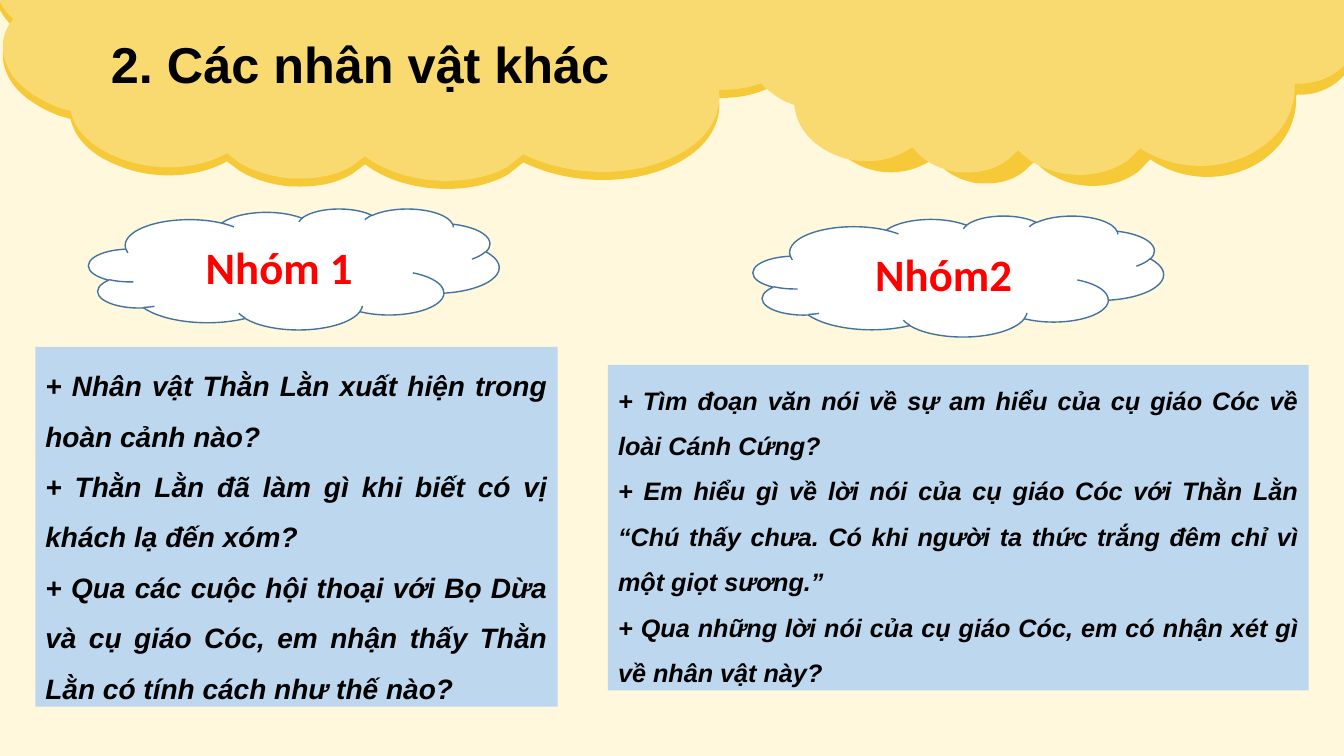
import math

from lxml import etree
from pptx import Presentation
from pptx.dml.color import RGBColor
from pptx.enum import shapes, text
from pptx.oxml.ns import qn
from pptx.util import Inches, Pt

CREAM = RGBColor(0xFF, 0xF8, 0xDC)
GOLD = RGBColor(0xF6, 0xC9, 0x38)
YELLOW = RGBColor(0xF9, 0xDA, 0x70)
PALE_BLUE = RGBColor(0xBD, 0xD7, 0xEE)
OUTLINE_BLUE = RGBColor(0x43, 0x73, 0x9E)
WHITE = RGBColor(0xFF, 0xFF, 0xFF)
BLACK = RGBColor(0, 0, 0)
RED = RGBColor(0xFF, 0, 0)

# Slide inches: the first pair is the start, two numbers are a straight step,
# six are a Bézier curve.
CLOUD_STEPS = [
    (-0.04, 0.01), (7.58, 0.01), (7.55, 0.04),
    (7.81, 0.17, 7.95, 0.38, 7.89, 0.58),
    (7.83, 0.82, 7.51, 0.98, 7.14, 0.97), (7.13, 0.98),
    (7.16, 1.22, 7.02, 1.45, 6.75, 1.6),
    (6.33, 1.84, 5.68, 1.85, 5.19, 1.61), (5.04, 1.73),
    (4.66, 1.95, 4, 1.92, 3.62, 1.63), (3.5, 1.72),
    (3.36, 1.81, 3.18, 1.85, 2.98, 1.85),
    (2.95, 1.85, 2.91, 1.85, 2.87, 1.85),
    (2.69, 1.83, 2.51, 1.78, 2.37, 1.69), (2.25, 1.6),
    (1.97, 1.76, 1.54, 1.79, 1.19, 1.65),
    (0.92, 1.55, 0.74, 1.38, 0.7, 1.18), (0.59, 1.15),
    (0.33, 1.05, 0.13, 0.9, 0.06, 0.71),
    (0, 0.56, 0.02, 0.4, 0.13, 0.27),
    (0.07, 0.21, 0.03, 0.16, 0, 0.1),
]

# Colour, frame, rotation, then how the outline is fitted:
# left, top, horizontal scale, slant of x with y, slope of y with x
SKY = [
    (GOLD, (-0.09, -0.31, 7.96, 2.24), 185, (0, 0, 1, 0, 0)),
    (YELLOW, (-0.09, -0.39, 7.96, 2.24), 185, (0, -0.08, 1, 0, 0)),
    (GOLD, (7.6, -0.33, 5.81, 2.24), 186.9, (7.7, -0.03, 0.73, -0.05, 0)),
    (YELLOW, (7.3, -0.43, 6.11, 2.24), 186.9, (7.41, -0.14, 0.77, -0.06, 0)),
]

GROUPS = [
    ("Nhóm 1", (0.88, 2.07), (0.35, 3.44, 5.18, 3.57), 20, [
        "+ Nhân vật Thằn Lằn xuất hiện trong hoàn cảnh nào?",
        "+ Thằn Lằn đã làm gì khi biết có vị khách lạ đến xóm?",
        "+ Qua các cuộc hội thoại với Bọ Dừa và cụ giáo Cóc, em nhận thấy "
        "Thằn Lằn có tính cách như thế nào?",
    ]),
    ("Nhóm2", (7.47, 2.14), (6.03, 3.62, 6.95, 3.23), 18, [
        "+ Tìm đoạn văn nói về sự am hiểu của cụ giáo Cóc về loài Cánh Cứng?",
        "+ Em hiểu gì về lời nói của cụ giáo Cóc với Thằn Lằn “Chú thấy chưa. "
        "Có khi người ta thức trắng đêm chỉ vì một giọt sương.”",
        "+ Qua những lời nói của cụ giáo Cóc, em có nhận xét gì về nhân vật này?",
    ]),
]


def to_frame(x, y, frame, rotation, fit):
    """Fit an outline point to its cloud, in the unrotated frame's own space."""
    left, top, width, height = frame
    dx, dy, scale, slant, slope = fit
    x, y = dx + scale * x + slant * y, dy + y + slope * x
    x, y = x - left - width / 2, y - top - height / 2
    cos, sin = math.cos(math.radians(rotation)), math.sin(math.radians(rotation))
    return (Inches(width / 2 + x * cos + y * sin),
            Inches(height / 2 - x * sin + y * cos))


def draw_curves(path, frame, rotation, fit):
    """Fill a freeform's path with the straight and curved cloud steps."""
    for child in list(path):
        path.remove(child)
    for i, step in enumerate(CLOUD_STEPS):
        tag = "a:moveTo" if i == 0 else "a:lnTo" if len(step) == 2 else "a:cubicBezTo"
        command = etree.SubElement(path, qn(tag))
        for x, y in zip(step[::2], step[1::2]):
            px, py = to_frame(x, y, frame, rotation, fit)
            etree.SubElement(command, qn("a:pt"), x=str(px), y=str(py))
    etree.SubElement(path, qn("a:close"))


def add_sky_cloud(slide, depth, color, frame, rotation, fit):
    """Draw a backdrop cloud and put it behind the placeholders."""
    left, top, width, height = map(Inches, frame)
    builder = slide.shapes.build_freeform(left, top, scale=1.0)
    builder.add_line_segments([(left + width, top), (left + width, top + height)])
    sp = builder.convert_to_shape()
    draw_curves(next(sp._element.iter(qn("a:path"))), frame, rotation, fit)
    sp.rotation = rotation
    sp.shadow.inherit = False
    sp.fill.solid()
    sp.fill.fore_color.rgb = color
    sp.line.fill.background()
    slide.shapes._spTree.insert(2 + depth, sp._element)


def place(sp, left, top, width, height):
    sp.left, sp.top = Inches(left), Inches(top)
    sp.width, sp.height = Inches(width), Inches(height)


def write(sp, lines, size, color=BLACK, font="Arial", italic=False,
          align=text.PP_ALIGN.LEFT, anchor=text.MSO_ANCHOR.TOP, spacing=1.0):
    tf = sp.text_frame
    tf.word_wrap = True
    tf.auto_size = text.MSO_AUTO_SIZE.NONE
    tf.vertical_anchor = anchor
    for i, line in enumerate(lines):
        p = tf.paragraphs[0] if i == 0 else tf.add_paragraph()
        pPr = p._p.get_or_add_pPr()
        pPr.set("marL", "0")
        pPr.set("indent", "0")
        etree.SubElement(pPr, qn("a:buNone"))
        p.alignment = align
        p.line_spacing = spacing
        p.space_before = Pt(0)
        r = p.add_run()
        r.text = line
        r.font.name = font
        r.font.size = Pt(size)
        r.font.bold = True
        r.font.italic = italic
        r.font.color.rgb = color


def add_group_cloud(slide, name, left, top):
    sp = slide.shapes.add_shape(shapes.MSO_SHAPE.CLOUD, Inches(left), Inches(top),
                                Inches(4.07), Inches(1.2))
    sp.shadow.inherit = False
    sp.fill.solid()
    sp.fill.fore_color.rgb = WHITE
    sp.line.color.rgb = OUTLINE_BLUE
    sp.line.width = Pt(1)
    write(sp, [name], 32, color=RED, font="Calibri",
          align=text.PP_ALIGN.CENTER, anchor=text.MSO_ANCHOR.MIDDLE)


def fill_questions(body, box, questions, size):
    place(body, *box)
    body.fill.solid()
    body.fill.fore_color.rgb = PALE_BLUE
    write(body, questions, size, italic=True,
          align=text.PP_ALIGN.JUSTIFY, spacing=1.5)


def main():
    prs = Presentation()
    prs.slide_width, prs.slide_height = Inches(13.33), Inches(7.5)
    slide = prs.slides.add_slide(prs.slide_layouts.get_by_name("Two Content"))
    slide.background.fill.solid()
    slide.background.fill.fore_color.rgb = CREAM

    title, *bodies = list(slide.placeholders)[:3]
    for depth, cloud in enumerate(SKY):
        add_sky_cloud(slide, depth, *cloud)

    place(title, 1, 0.28, 10.03, 0.71)
    write(title, ["2. Các nhân vật khác"], 36)

    for body, (name, corner, box, size, questions) in zip(bodies, GROUPS):
        fill_questions(body, box, questions, size)
        add_group_cloud(slide, name, *corner)

    prs.save("out.pptx")


if __name__ == "__main__":
    main()
